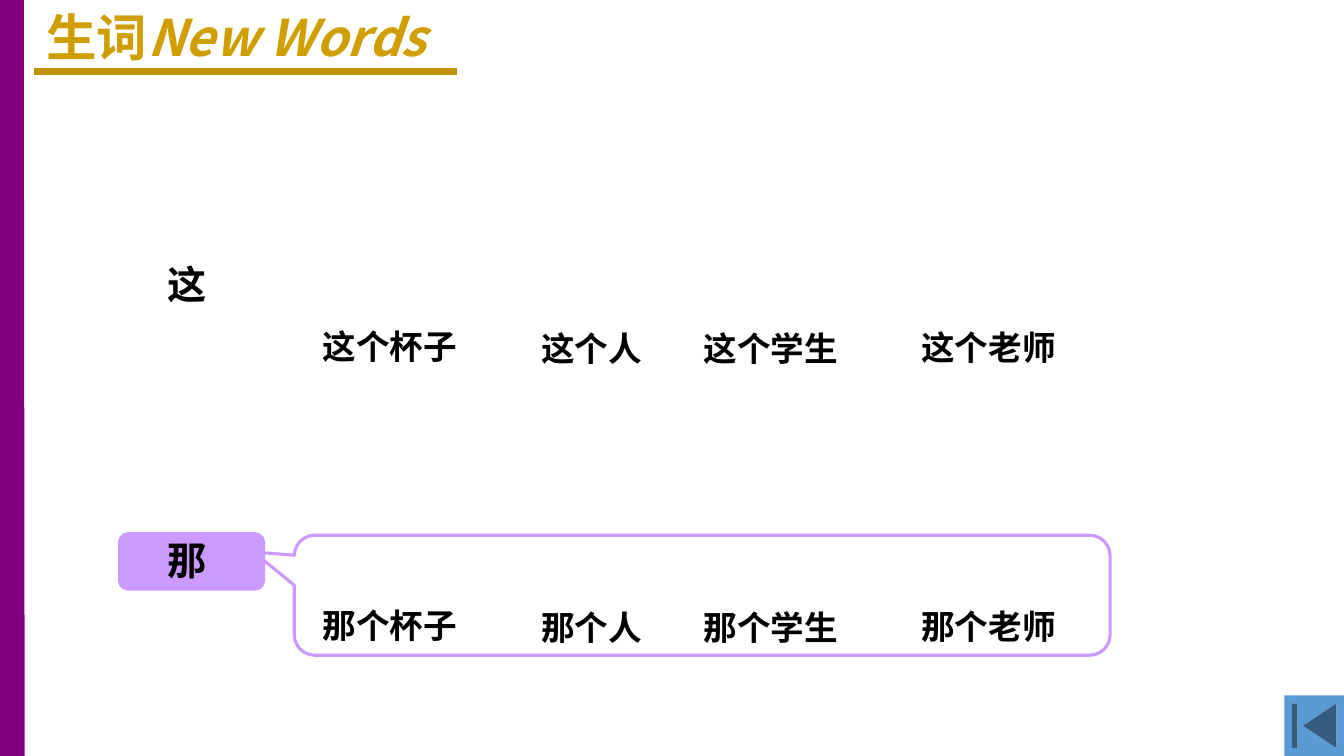
from lxml import etree
from pptx import Presentation
from pptx.dml.color import RGBColor
from pptx.enum.shapes import MSO_CONNECTOR, MSO_SHAPE
from pptx.enum.text import MSO_ANCHOR, MSO_AUTO_SIZE, PP_ALIGN
from pptx.oxml.ns import qn
from pptx.util import Inches, Pt

SLIDE_WIDTH = Inches(13.33)
SLIDE_HEIGHT = Inches(7.5)
TITLE_ONLY = 5

STRAIGHT = MSO_CONNECTOR.STRAIGHT
CALLOUT = MSO_SHAPE.ROUNDED_RECTANGULAR_CALLOUT
ROUNDED = MSO_SHAPE.ROUNDED_RECTANGLE
BEGINNING_BUTTON = MSO_SHAPE.ACTION_BUTTON_BEGINNING
TOP = MSO_ANCHOR.TOP
LEFT = PP_ALIGN.LEFT
NO_AUTOFIT = MSO_AUTO_SIZE.NONE
GROW = MSO_AUTO_SIZE.SHAPE_TO_FIT_TEXT

WHITE = RGBColor(0xFF, 0xFF, 0xFF)
BLACK = RGBColor(0x00, 0x00, 0x00)
LILAC = RGBColor(0xCC, 0x99, 0xFF)
PURPLE = RGBColor(0x80, 0x00, 0x80)
GOLD = RGBColor(0xD0, 0x9E, 0x00)
DARK_GOLD = RGBColor(0xBF, 0x90, 0x00)
BLUE = RGBColor(0x5B, 0x9B, 0xD5)

CHINESE_FONT = "Noto Sans CJK SC"
LATIN_FONT = "Calibri"

DEMONSTRATIVES = [("这", 33.73, 42.55), ("那", 70.27, 79.5)]
NOUNS = [("个杯子", 23.26, 11.63), ("个人", 39.53, 31.06),
         ("个学生", 51.61, 31.06), ("个老师", 67.82, 31.06)]
NOUN_OFFSETS = [-0.15, 0.12, 0.15, 0]


def across(percent):
    return round(SLIDE_WIDTH * percent / 100)


def down(percent):
    return round(SLIDE_HEIGHT * percent / 100)


def box(left, top, width, height):
    return across(left), down(top), across(width), down(height)


def format_run(run, size, font_name, color):
    run.font.size = Pt(size)
    run.font.bold = True
    run.font.name = font_name
    run.font.color.rgb = color
    east_asian = etree.SubElement(run.font._element, qn("a:ea"))
    east_asian.set("typeface", CHINESE_FONT)


def add_title(slide):
    title = slide.shapes.title
    title.left, title.top, title.width, title.height = box(2.7, 0.13, 31.28, 9.47)
    frame = title.text_frame
    frame.auto_size = NO_AUTOFIT
    frame.word_wrap = False
    frame.margin_right = 0
    frame.vertical_anchor = TOP
    paragraph = frame.paragraphs[0]
    paragraph.alignment = LEFT
    paragraph.line_spacing = 1.0
    for words, italic in (("生词", False), ("New Words", True)):
        run = paragraph.add_run()
        run.text = words
        format_run(run, 36, CHINESE_FONT, GOLD)
        run.font.italic = italic


def add_filled_shape(slide, kind, bounds, fill, line=None, adjustments=()):
    shape = slide.shapes.add_shape(kind, *box(*bounds))
    shape.shadow.inherit = False
    shape.fill.solid()
    shape.fill.fore_color.rgb = fill
    if line is None:
        shape.line.fill.background()
    else:
        shape.line.color.rgb = line
        shape.line.width = Pt(2.25)
    for index, value in enumerate(adjustments):
        shape.adjustments[index] = value


def add_rule(slide, start, end, color, width):
    rule = slide.shapes.add_connector(
        STRAIGHT, across(start[0]), down(start[1]), across(end[0]), down(end[1]))
    rule.line.color.rgb = color
    rule.line.width = Pt(width)
    etree.SubElement(rule._element.spPr, qn("a:effectLst"))


def add_word(slide, word, bounds, size, font_name, wrap):
    text_box = slide.shapes.add_textbox(*box(*bounds))
    frame = text_box.text_frame
    frame.word_wrap = wrap
    frame.auto_size = GROW
    frame.text = word
    format_run(frame.paragraphs[0].runs[0], size, font_name, BLACK)


def add_word_row(slide, demonstrative, word_top, phrase_top):
    add_word(slide, demonstrative, (11.74, word_top, 4.43, 7.67), 28, LATIN_FONT, False)
    for (noun, left, width), offset in zip(NOUNS, NOUN_OFFSETS):
        add_word(slide, demonstrative + noun, (left, phrase_top + offset, width, 6.8),
                 24, CHINESE_FONT, noun != NOUNS[0][0])


def main():
    presentation = Presentation()
    presentation.slide_width = SLIDE_WIDTH
    presentation.slide_height = SLIDE_HEIGHT
    slide = presentation.slides.add_slide(presentation.slide_layouts[TITLE_ONLY])

    add_filled_shape(slide, CALLOUT, (21.9, 70.8, 60.7, 15.87), WHITE, LILAC,
                     (-0.55, -0.36, 0.17))
    add_filled_shape(slide, ROUNDED, (8.78, 70.4, 10.95, 7.73), LILAC,
                     adjustments=(0.17,))
    add_rule(slide, (0.9, 100), (0.83, -0.27), PURPLE, 18)
    add_title(slide)
    add_rule(slide, (2.55, 9.47), (33.98, 9.47), DARK_GOLD, 5.5)
    for row in DEMONSTRATIVES:
        add_word_row(slide, *row)
    add_filled_shape(slide, BEGINNING_BUTTON, (95.57, 92, 4.43, 8), BLUE)

    presentation.save("out.pptx")


if __name__ == "__main__":
    main()
